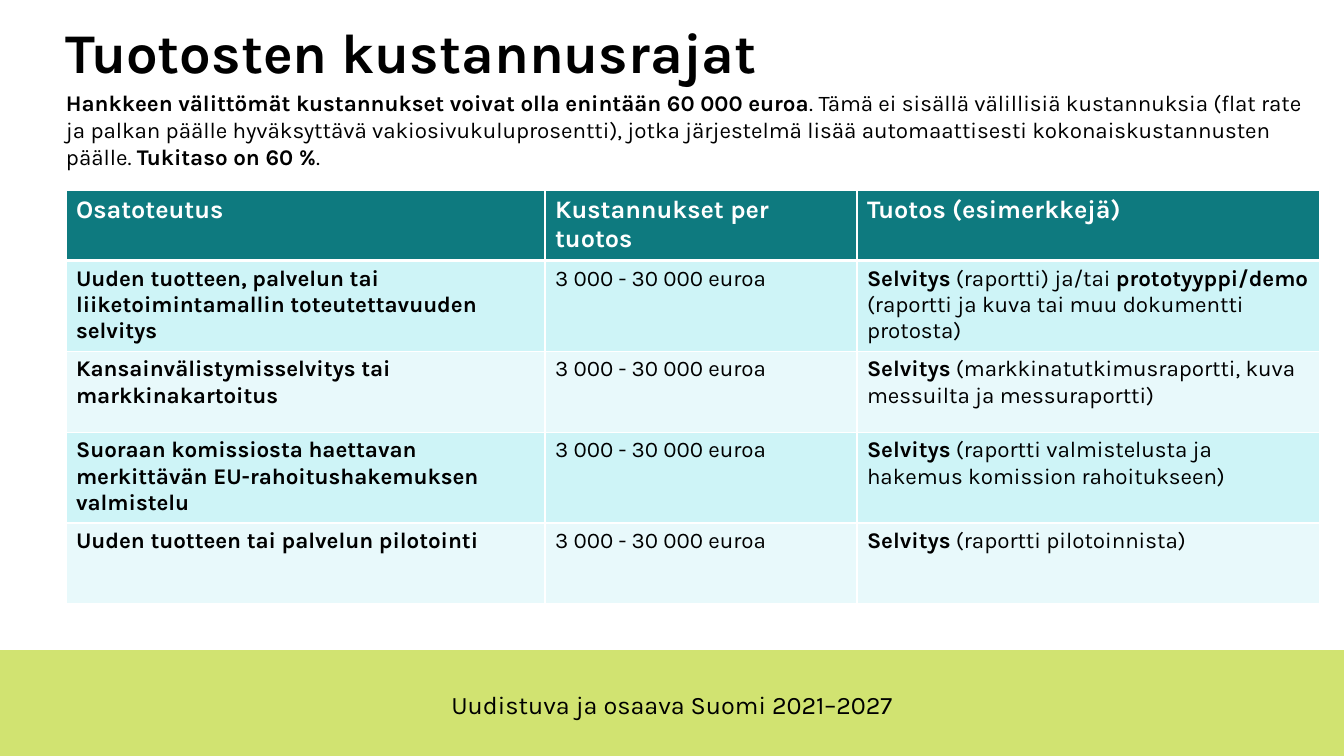
from lxml import etree
from pptx import Presentation
from pptx.dml.color import RGBColor
from pptx.enum.shapes import MSO_SHAPE
from pptx.enum.text import MSO_ANCHOR, PP_ALIGN
from pptx.oxml.ns import qn
from pptx.util import Emu, Pt

RECTANGLE = MSO_SHAPE.RECTANGLE
TOP, MIDDLE, BOTTOM = MSO_ANCHOR.TOP, MSO_ANCHOR.MIDDLE, MSO_ANCHOR.BOTTOM
LEFT, CENTER = PP_ALIGN.LEFT, PP_ALIGN.CENTER

PX_PER_INCH = 100.8
SLIDE_WIDTH, SLIDE_HEIGHT = 1344, 756
FONT = "Karla"
COLORS = {
    "text": "000000",
    "white": "FFFFFF",
    "footer": "D1E371",
    "header": "0E7A7F",
    "odd_row": "CEF4F7",
    "even_row": "E8F9FB",
}

TITLE = "**Tuotosten kustannusrajat**"
INTRO = (
    "**Hankkeen välittömät kustannukset voivat olla enintään 60 000 euroa**. "
    "Tämä ei sisällä välillisiä kustannuksia (flat rate ja palkan päälle "
    "hyväksyttävä vakiosivukuluprosentti), jotka järjestelmä lisää "
    "automaattisesti kokonaiskustannusten päälle. **Tukitaso on 60 %**."
)
FOOTER = "Uudistuva ja osaava Suomi 2021–2027"
COST = "3 000 - 30 000 euroa"
HEADINGS = ["Osatoteutus", "Kustannukset per tuotos", "Tuotos (esimerkkejä)"]
OUTPUTS = [
    ("Uuden tuotteen, palvelun tai liiketoimintamallin toteutettavuuden selvitys",
     "**Selvitys** (raportti) ja/tai **prototyyppi/demo** "
     "(raportti ja kuva tai muu dokumentti protosta)"),
    ("Kansainvälistymisselvitys tai markkinakartoitus",
     "**Selvitys** (markkinatutkimusraportti, kuva messuilta ja messuraportti)"),
    ("Suoraan komissiosta haettavan merkittävän EU-rahoitushakemuksen valmistelu",
     "**Selvitys** (raportti valmistelusta ja hakemus komission rahoitukseen)"),
    ("Uuden tuotteen tai palvelun pilotointi",
     "**Selvitys** (raportti pilotoinnista)"),
]
COLUMN_WIDTHS = [479, 312, 463]
ROW_HEIGHTS = [63, 87, 81, 90, 81]


def px(length):
    return Emu(round(length * 914400 / PX_PER_INCH))


def rgb(name):
    return RGBColor.from_string(COLORS[name])


def write(para, text, size, color="text"):
    """Fill a paragraph; the parts between double asterisks are bold."""
    para.font.name = FONT
    para.font.size = Pt(size)
    para.font.color.rgb = rgb(color)
    for index, part in enumerate(text.split("**")):
        if part:
            span = para.add_run()
            span.text = part
            span.font.bold = index % 2 == 1


def add_text(slide, box, text, size, anchor=TOP, align=LEFT, spacing=1.0):
    frame = slide.shapes.add_textbox(*map(px, box)).text_frame
    frame.word_wrap = True
    frame.vertical_anchor = anchor
    frame.margin_left = frame.margin_right = 0
    frame.margin_top = frame.margin_bottom = 0
    para = frame.paragraphs[0]
    para.alignment = align
    para.line_spacing = spacing
    write(para, text, size)


def add_footer(slide, box):
    left, top, width, height = box
    band = slide.shapes.add_shape(RECTANGLE, *map(px, box))
    band.shadow.inherit = False
    band.fill.solid()
    band.fill.fore_color.rgb = rgb("footer")
    band.line.fill.background()
    add_text(slide, (left + 328, top + 39, width - 656, 30), FOOTER, 18,
             MIDDLE, CENTER)


def set_borders(cell, bottom_width):
    properties = cell._tc.get_or_add_tcPr()
    for side, width in (("L", 1), ("R", 1), ("T", 1), ("B", bottom_width)):
        line = etree.SubElement(properties, qn(f"a:ln{side}"), w=str(Pt(width)))
        fill = etree.SubElement(line, qn("a:solidFill"))
        etree.SubElement(fill, qn("a:srgbClr"), val=COLORS["white"])


def style_cell(cell, text, size, color, fill, bottom_width):
    set_borders(cell, bottom_width)
    cell.fill.solid()
    cell.fill.fore_color.rgb = rgb(fill)
    write(cell.text_frame.paragraphs[0], text, size, color)


def add_cost_table(slide, left, top):
    rows = [[f"**{heading}**" for heading in HEADINGS]]
    rows += [[f"**{part}**", COST, output] for part, output in OUTPUTS]
    table = slide.shapes.add_table(
        len(rows), len(HEADINGS), px(left), px(top),
        px(sum(COLUMN_WIDTHS)), px(sum(ROW_HEIGHTS))).table
    for column, width in zip(table.columns, COLUMN_WIDTHS):
        column.width = px(width)
    for row, height in zip(table.rows, ROW_HEIGHTS):
        row.height = px(height)
    for row_index, texts in enumerate(rows):
        if row_index == 0:
            style = (18, "white", "header", 3)
        else:
            style = (16, "text", "odd_row" if row_index % 2 else "even_row", 1)
        for column_index, text in enumerate(texts):
            style_cell(table.cell(row_index, column_index), text, *style)


def add_cost_limits_slide(deck):
    slide = deck.slides.add_slide(deck.slide_layouts[6])
    add_footer(slide, (0, 650, SLIDE_WIDTH, 106))
    add_text(slide, (66, 27, 1268, 59), TITLE, 40, BOTTOM, spacing=0.9)
    add_cost_table(slide, 66, 190)
    add_text(slide, (66, 89, 1242, 82), INTRO, 16)


def main():
    deck = Presentation()
    deck.slide_width, deck.slide_height = px(SLIDE_WIDTH), px(SLIDE_HEIGHT)
    add_cost_limits_slide(deck)
    deck.save("out.pptx")


if __name__ == "__main__":
    main()
